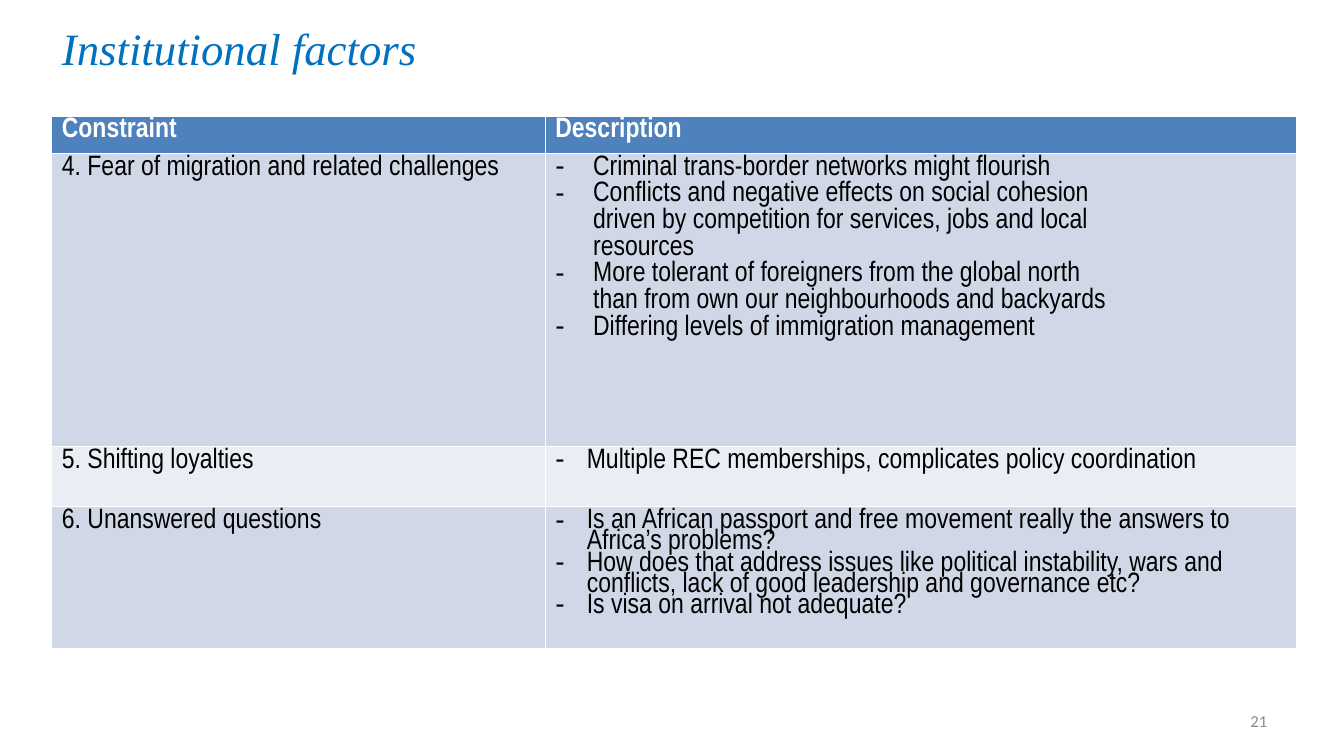
"""Build the slide on institutional factors with its table of constraints."""
from lxml import etree
from pptx import Presentation
from pptx.dml.color import RGBColor
from pptx.enum import text
from pptx.oxml import ns
from pptx.util import Pt

BLUE = RGBColor(0x00, 0x70, 0xC0)
HEADER = RGBColor(0x4F, 0x81, 0xBD)
DARK_BAND = RGBColor(0xD0, 0xD8, 0xE8)
LIGHT_BAND = RGBColor(0xE9, 0xED, 0xF4)
WHITE = RGBColor(0xFF, 0xFF, 0xFF)
BLACK = RGBColor(0x00, 0x00, 0x00)
GREY = RGBColor(0x8C, 0x8C, 0x8C)


def write(para, words, size=20, font="Arial Narrow", color=BLACK, bold=False,
          italic=False, align=text.PP_ALIGN.LEFT, spacing=None, before=0,
          indent=0, bullet=False):
    """Fill a paragraph with one formatted run."""
    span = para.add_run()
    span.text = words
    span.font.size = Pt(size)
    span.font.name = font
    span.font.color.rgb = color
    span.font.bold = bold
    span.font.italic = italic
    para.alignment = align
    para.line_spacing = spacing
    para.space_before = Pt(before)
    if indent:
        properties = para._p.get_or_add_pPr()
        properties.set("marL", str(Pt(indent)))
        properties.set("indent", str(-Pt(indent) if bullet else 0))
        if bullet:
            etree.SubElement(properties, ns.qn("a:buFont")).set("typeface", "Arial")
            etree.SubElement(properties, ns.qn("a:buChar")).set("char", "-")


deck = Presentation()
deck.slide_width, deck.slide_height = Pt(960), Pt(540)
page = deck.slides.add_slide(deck.slide_layouts[5])

title = page.shapes.title
title.left, title.top, title.width, title.height = Pt(37), Pt(14.4), Pt(648), Pt(39.6)
title.text_frame.vertical_anchor = text.MSO_ANCHOR.MIDDLE
write(title.text_frame.paragraphs[0], "Institutional factors", size=32,
      font="Times New Roman", color=BLUE, italic=True)

FIRST_INDENT, WIDE_INDENT = 22.5, 27
rows = [
    (26.6, HEADER, "Constraint", 0, [("Description", False)]),
    (209.5, DARK_BAND, "4. Fear of migration and related challenges", WIDE_INDENT, [
        ("Criminal trans-border networks might flourish", True),
        ("Conflicts and negative effects on social cohesion", True),
        ("driven by competition for services, jobs and local", False),
        ("resources", False),
        ("More tolerant of foreigners from the global north", True),
        ("than from own our neighbourhoods and backyards", False),
        ("Differing levels of immigration management", True)]),
    (43.2, LIGHT_BAND, "5. Shifting loyalties", FIRST_INDENT, [
        ("Multiple REC memberships, complicates policy coordination", True)]),
    (101.5, DARK_BAND, "6. Unanswered questions", FIRST_INDENT, [
        ("Is an African passport and free movement really the answers to "
         "Africa’s problems?", True),
        ("How does that address issues like political instability, wars and "
         "conflicts, lack of good leadership and governance etc?", True),
        ("Is visa on arrival not adequate?", True)]),
]

table = page.shapes.add_table(len(rows), 2, Pt(37), Pt(82.8), Pt(889), Pt(380.8)).table
table.columns[0].width, table.columns[1].width = Pt(352.5), Pt(536.5)

for row, (height, fill, constraint, indent, lines) in enumerate(rows):
    table.rows[row].height = Pt(height)
    color = WHITE if row == 0 else BLACK
    for column in range(2):
        cell = table.cell(row, column)
        cell.fill.solid()
        cell.fill.fore_color.rgb = fill
    write(table.cell(row, 0).text_frame.paragraphs[0], constraint,
          color=color, bold=row == 0, spacing=0.8)
    frame = table.cell(row, 1).text_frame
    for number, (words, bullet) in enumerate(lines):
        para = frame.add_paragraph() if number else frame.paragraphs[0]
        before = 4 if number and indent == WIDE_INDENT else 0
        write(para, words, color=color, bold=row == 0, spacing=0.8,
              before=before, indent=indent, bullet=bullet)

box = page.shapes.add_textbox(Pt(688.3), Pt(500.4), Pt(224), Pt(28.8))
box.text_frame.word_wrap = True
box.text_frame.vertical_anchor = text.MSO_ANCHOR.MIDDLE
write(box.text_frame.paragraphs[0], "21", size=12, font="Calibri", color=GREY,
      align=text.PP_ALIGN.RIGHT)

deck.save("out.pptx")
